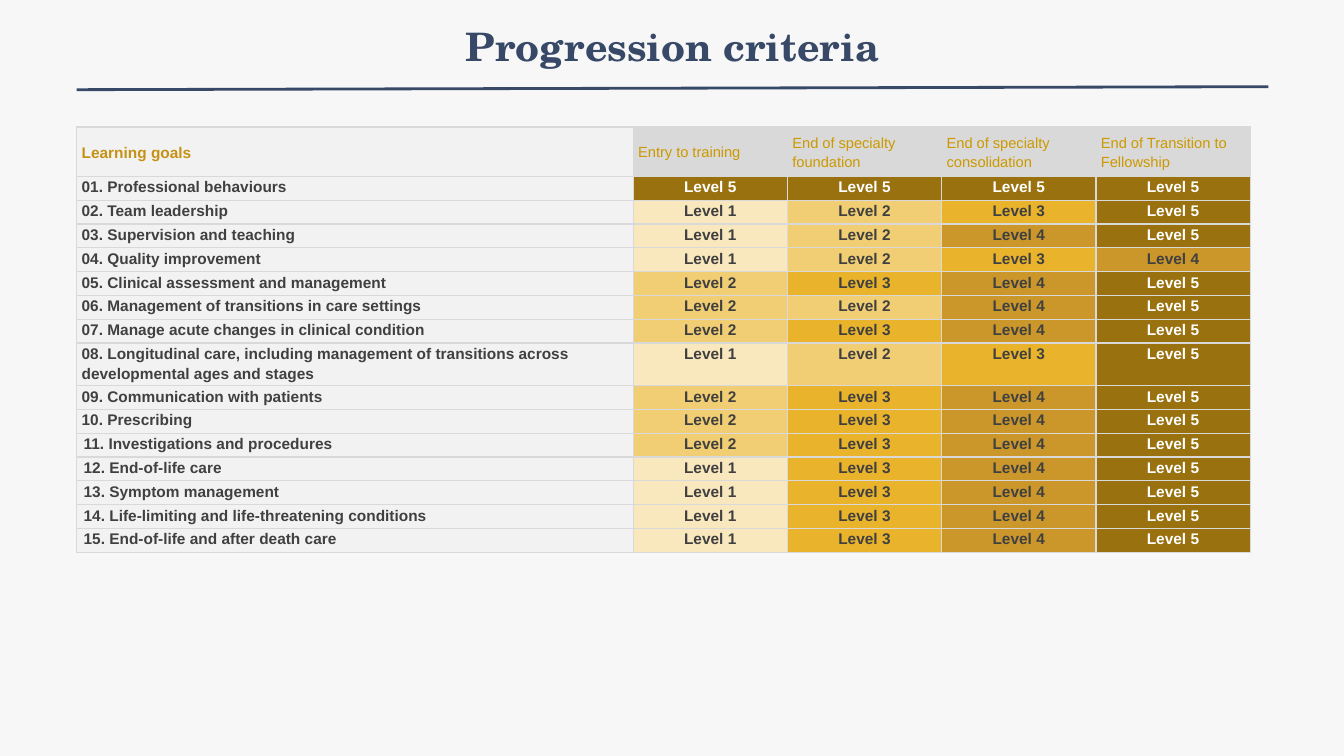
from dataclasses import dataclass

from lxml import etree
from pptx import Presentation
from pptx.dml.color import RGBColor
from pptx.enum import shapes, text
from pptx.oxml import ns
from pptx.util import Inches, Pt


@dataclass(frozen=True)
class Theme:
    background: str = "F7F7F7"
    navy: str = "384967"
    goal_heading: str = "C69214"
    stage_heading: str = "CC9900"
    body: str = "404040"
    white: str = "FFFFFF"
    goal_fill: str = "F2F2F2"
    grey: str = "D9D9D9"
    levels: tuple = ("F9E8BD", "F1CD73", "E9B32B", "CB972B", "99720F")
    title_font: str = "TeX Gyre Schola"
    body_font: str = "Arial"
    title_size: float = 28
    body_size: float = 11
    stage_size: float = 10.5


THEME = Theme()

STAGES = [
    "Entry to training",
    "End of specialty foundation",
    "End of specialty consolidation",
    "End of Transition to Fellowship",
]

GOALS = [
    ("Professional behaviours", (5, 5, 5, 5)),
    ("Team leadership", (1, 2, 3, 5)),
    ("Supervision and teaching", (1, 2, 4, 5)),
    ("Quality improvement", (1, 2, 3, 4)),
    ("Clinical assessment and management", (2, 3, 4, 5)),
    ("Management of transitions in care settings", (2, 2, 4, 5)),
    ("Manage acute changes in clinical condition", (2, 3, 4, 5)),
    ("Longitudinal care, including management of transitions across "
     "developmental ages and stages", (1, 2, 3, 5)),
    ("Communication with patients", (2, 3, 4, 5)),
    ("Prescribing", (2, 3, 4, 5)),
    ("Investigations and procedures", (2, 3, 4, 5)),
    ("End-of-life care", (1, 3, 4, 5)),
    ("Symptom management", (1, 3, 4, 5)),
    ("Life-limiting and life-threatening conditions", (1, 3, 4, 5)),
    ("End-of-life and after death care", (1, 3, 4, 5)),
]
LONG_GOAL = 8
FIRST_INSET_GOAL = 11


def style_run(r, font, size, color, bold):
    r.font.name = font
    r.font.size = Pt(size)
    r.font.bold = bold
    r.font.color.rgb = RGBColor.from_string(color)


def add_title(s, left, top, width, height):
    tf = s.shapes.add_textbox(
        Inches(left), Inches(top), Inches(width), Inches(height)).text_frame
    tf.word_wrap = True
    tf.text = "Progression criteria"
    p = tf.paragraphs[0]
    p.alignment = text.PP_ALIGN.CENTER
    style_run(p.runs[0], THEME.title_font, THEME.title_size, THEME.navy, True)


def add_rule(s, left, top, width, height):
    rule = s.shapes.add_connector(
        shapes.MSO_CONNECTOR.STRAIGHT, Inches(left), Inches(top + height),
        Inches(left + width), Inches(top))
    rule.line.color.rgb = RGBColor.from_string(THEME.navy)
    rule.line.width = Pt(2)
    etree.SubElement(rule._element.spPr, ns.qn("a:effectLst"))


def add_borders(cell):
    tcPr = cell._tc.get_or_add_tcPr()
    for i, side in enumerate(("lnL", "lnR", "lnT", "lnB")):
        ln = etree.Element(ns.qn(f"a:{side}"), w=str(Pt(1)))
        fill = etree.SubElement(ln, ns.qn("a:solidFill"))
        etree.SubElement(fill, ns.qn("a:srgbClr"), val=THEME.grey)
        tcPr.insert(i, ln)


def fill_cell(cell, words, fill, color, size=THEME.body_size, bold=True,
              centred=False, middle=False, inset=0.05):
    cell.fill.solid()
    cell.fill.fore_color.rgb = RGBColor.from_string(fill)
    cell.margin_left = cell.margin_right = Inches(inset)
    cell.margin_top = cell.margin_bottom = 0
    cell.vertical_anchor = (
        text.MSO_ANCHOR.MIDDLE if middle else text.MSO_ANCHOR.TOP)
    cell.text_frame.text = words
    p = cell.text_frame.paragraphs[0]
    p.alignment = text.PP_ALIGN.CENTER if centred else text.PP_ALIGN.LEFT
    p.line_spacing = 1.15
    style_run(p.runs[0], THEME.body_font, size, color, bold)
    add_borders(cell)


def add_criteria_table(s, left, top, width, height):
    stage_width, header_height, long_height = 1.53, 0.49, 0.39
    row_height = (height - header_height - long_height) / (len(GOALS) - 1)
    table = s.shapes.add_table(
        len(GOALS) + 1, len(STAGES) + 1, Inches(left), Inches(top),
        Inches(width), Inches(height)).table
    table.first_row = table.horz_banding = False

    for column in table.columns:
        column.width = Inches(stage_width)
    table.columns[0].width = Inches(width - stage_width * len(STAGES))
    for row in table.rows:
        row.height = Inches(row_height)
    table.rows[0].height = Inches(header_height)
    table.rows[LONG_GOAL].height = Inches(long_height)

    fill_cell(table.cell(0, 0), "Learning goals", THEME.goal_fill,
              THEME.goal_heading, middle=True)
    for col, stage in enumerate(STAGES, 1):
        fill_cell(table.cell(0, col), stage, THEME.grey, THEME.stage_heading,
                  size=THEME.stage_size, bold=False, middle=True)
    for row, (goal, levels) in enumerate(GOALS, 1):
        fill_cell(table.cell(row, 0), f"{row:02d}. {goal}", THEME.goal_fill,
                  THEME.body, inset=0.07 if row >= FIRST_INSET_GOAL else 0.05)
        for col, level in enumerate(levels, 1):
            fill_cell(table.cell(row, col), f"Level {level}",
                      THEME.levels[level - 1],
                      THEME.white if level == 5 else THEME.body, centred=True)


def main():
    prs = Presentation()
    prs.slide_width, prs.slide_height = Inches(13.33), Inches(7.5)
    s = prs.slides.add_slide(prs.slide_layouts[6])
    s.background.fill.solid()
    s.background.fill.fore_color.rgb = RGBColor.from_string(THEME.background)
    add_title(s, 2.17, 0.17, 9, 1.25)
    add_rule(s, 0.76, 0.86, 11.82, 0.03)
    add_criteria_table(s, 0.76, 1.26, 11.64, 4.19)
    prs.save("out.pptx")


if __name__ == "__main__":
    main()
